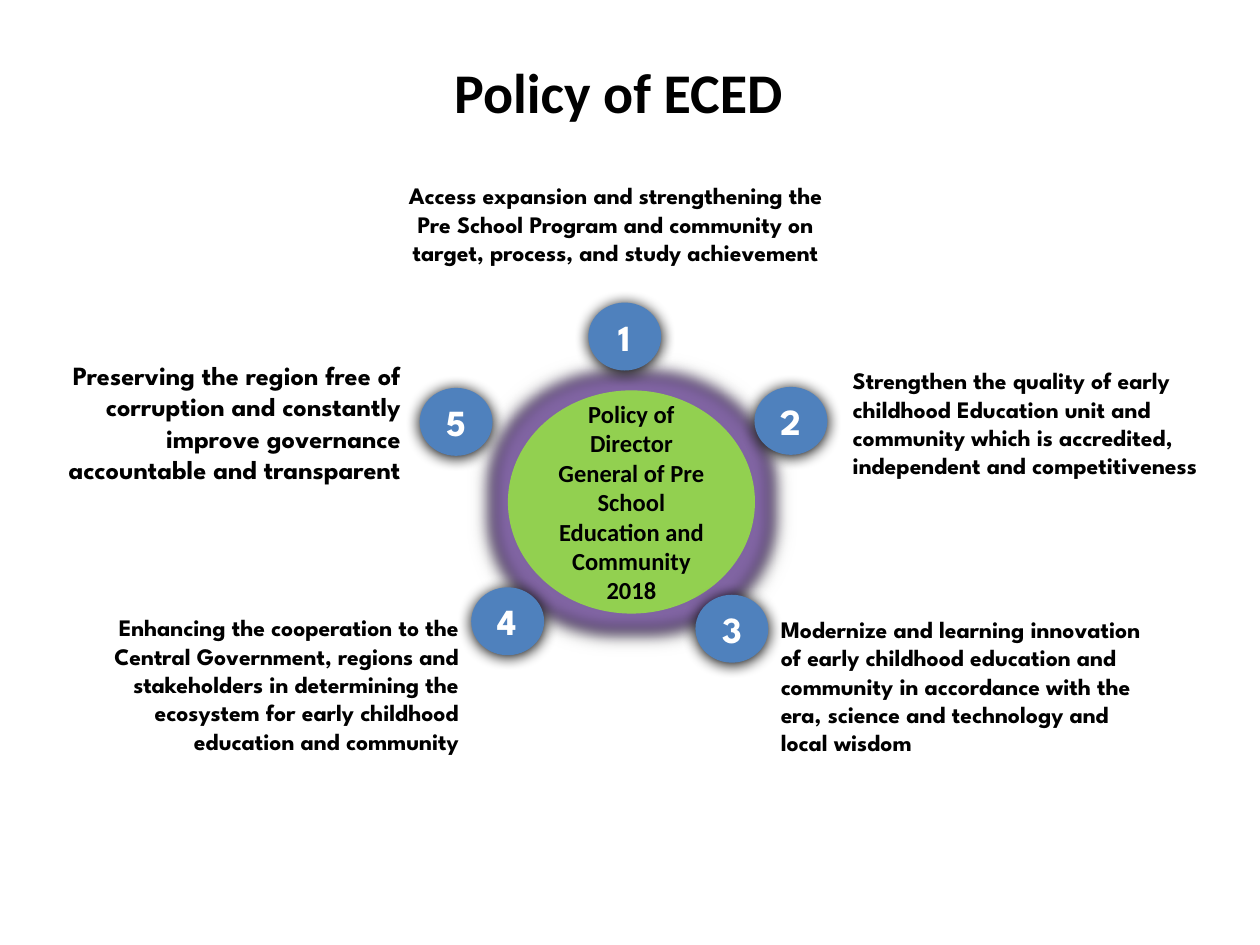
from dataclasses import dataclass

from lxml import etree
from pptx import Presentation
from pptx.dml.color import RGBColor
from pptx.enum.shapes import MSO_SHAPE
from pptx.enum.text import MSO_ANCHOR, PP_ALIGN
from pptx.oxml.ns import qn
from pptx.util import Cm, Pt

OVAL = MSO_SHAPE.OVAL
TOP, MIDDLE = MSO_ANCHOR.TOP, MSO_ANCHOR.MIDDLE
LEFT, CENTER, RIGHT = PP_ALIGN.LEFT, PP_ALIGN.CENTER, PP_ALIGN.RIGHT
HEAD_FONT, BODY_FONT = "Calibri", "League Spartan"
BLACK, WHITE, BLUE, GREEN, PURPLE = "000000", "FFFFFF", "4F81BD", "92D050", "8064A2"
BADGE_SIZE = (1.47, 1.37)

Box = tuple[float, float, float, float]


@dataclass
class Policy:
    text: str
    box: Box
    badge: tuple[float, float]
    align: PP_ALIGN
    size: float = 13.5


POLICIES = [
    Policy("Access expansion and strengthening the Pre School Program and community "
           "on target, process, and study achievement",
           (7.7, 3.53, 9.42, 2.57), (11.86, 6.1), CENTER),
    Policy("Strengthen the quality of early childhood Education unit and community "
           "which is accredited, independent and competitiveness",
           (16.94, 7.26, 7.8, 3.15), (15.21, 7.8), LEFT),
    Policy("Modernize and learning innovation of early childhood education and community "
           "in accordance with the era, science and technology and local wisdom",
           (15.49, 12.27, 8.13, 3.71), (14.02, 11.99), LEFT),
    Policy("Enhancing the cooperation to the Central Government, regions and stakeholders "
           "in determining the ecosystem for early childhood education and community",
           (1.7, 12.24, 7.8, 3.71), (9.5, 11.84), RIGHT),
    Policy("Preserving the region free of corruption and constantly improve governance "
           "accountable and transparent",
           (0.94, 7.11, 7.39, 3.45), (8.46, 7.82), RIGHT, 15),
]


def rgb(color: str) -> RGBColor:
    return RGBColor.from_string(color)


def write(sp, text: str, *, size: float, font: str = BODY_FONT, color: str = BLACK,
          align: PP_ALIGN = CENTER, anchor: MSO_ANCHOR = MIDDLE) -> None:
    tf = sp.text_frame
    tf.word_wrap = True
    tf.vertical_anchor = anchor
    p = tf.paragraphs[0]
    p.alignment = align
    r = p.add_run()
    r.text = text
    r.font.name, r.font.size, r.font.bold = font, Pt(size), True
    r.font.color.rgb = rgb(color)


def add_effect(sp, tag: str, color: str, alpha: int, **attrs: int) -> None:
    effects = sp._element.spPr.find(qn("a:effectLst"))
    effect = etree.SubElement(effects, qn(tag), {k: str(v) for k, v in attrs.items()})
    clr = etree.SubElement(effect, qn("a:srgbClr"), val=color)
    etree.SubElement(clr, qn("a:alpha"), val=str(alpha * 1000))


def add_oval(s, box: Box, fill: str, glow: str | None = None):
    sp = s.shapes.add_shape(OVAL, *map(Cm, box))
    sp.fill.solid()
    sp.fill.fore_color.rgb = rgb(fill)
    sp.line.fill.background()
    sp.shadow.inherit = False
    if glow:
        add_effect(sp, "a:glow", glow, 100, rad=Pt(18))
    add_effect(sp, "a:outerShdw", BLACK, 100, blurRad=Pt(8.5), dist=Pt(1), dir=90 * 60000)
    return sp


def add_text(s, box: Box, text: str, **style) -> None:
    write(s.shapes.add_textbox(*map(Cm, box)), text, **style)


def add_policy(s, number: int, policy: Policy) -> None:
    add_text(s, policy.box, policy.text, size=policy.size, align=policy.align, anchor=TOP)
    write(add_oval(s, policy.badge + BADGE_SIZE, BLUE), str(number), size=21, color=WHITE)


def main() -> None:
    """Build the slide with a central policy disc and five numbered policies around it."""
    prs = Presentation()
    prs.slide_width, prs.slide_height = Cm(25.4), Cm(19.05)
    s = prs.slides.add_slide(prs.slide_layouts[6])
    hub = add_oval(s, (10.24, 7.87, 4.98, 4.5), GREEN, glow=PURPLE)
    write(hub, "Policy of Director General of Pre School Education and Community 2018",
          size=14, font=HEAD_FONT)
    for number, policy in enumerate(POLICIES, 1):
        add_policy(s, number, policy)
    add_text(s, (1.04, 0.71, 22.86, 2.24), "Policy of ECED", size=32, font=HEAD_FONT)
    prs.save("out.pptx")


if __name__ == "__main__":
    main()
